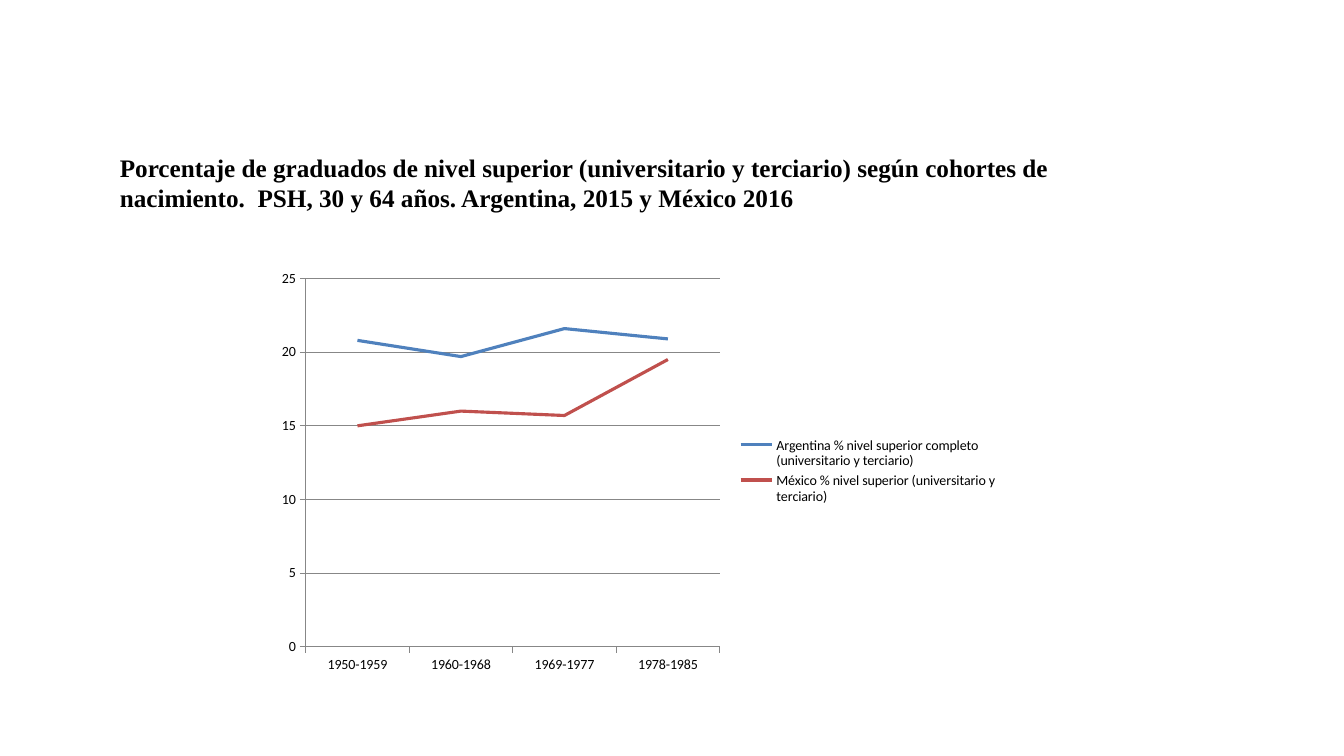
from dataclasses import dataclass

from lxml.etree import SubElement
from pptx import Presentation
from pptx.chart.chart import Chart
from pptx.chart.data import CategoryChartData
from pptx.dml.color import RGBColor
from pptx.enum.chart import XL_CHART_TYPE, XL_LEGEND_POSITION, XL_MARKER_STYLE, XL_TICK_MARK
from pptx.oxml.ns import qn
from pptx.slide import Slide
from pptx.util import Pt

BLACK = RGBColor(0x00, 0x00, 0x00)
GRAY = RGBColor(0x87, 0x87, 0x87)
BLUE = RGBColor(0x4F, 0x81, 0xBD)
RED = RGBColor(0xC0, 0x50, 0x4D)

TITLE = (
    "Porcentaje de graduados de nivel superior (universitario y terciario) según cohortes de "
    "nacimiento.  PSH, 30 y 64 años. Argentina, 2015 y México 2016"
)
COHORTS = ["1950-1959", "1960-1968", "1969-1977", "1978-1985"]


@dataclass(frozen=True)
class Country:
    label: str
    values: tuple[float, ...]
    color: RGBColor


COUNTRIES = [
    Country("Argentina % nivel superior completo (universitario y terciario)",
            (20.8, 19.7, 21.6, 20.9), BLUE),
    Country("México % nivel superior (universitario y terciario)",
            (15, 16, 15.7, 19.5), RED),
]


def add_text(s: Slide, text: str, *, left: float, top: float, width: float, height: float,
             size: float, font: str, color: RGBColor = BLACK, bold: bool = False) -> None:
    tf = s.shapes.add_textbox(Pt(left), Pt(top), Pt(width), Pt(height)).text_frame
    tf.word_wrap = True
    r = tf.paragraphs[0].add_run()
    r.text = text
    r.font.size = Pt(size)
    r.font.name = font
    r.font.bold = bold
    r.font.color.rgb = color


def set_plot_layout(chart: Chart, **fractions: float) -> None:
    """Fix the inner plot area, given as fractions (x, y, w, h) of the chart."""
    plot_area = chart.plots[0]._element.getparent()
    layout = plot_area.find(qn("c:layout"))
    if layout is None:
        layout = SubElement(plot_area, qn("c:layout"))
        plot_area.insert(0, layout)
    manual = SubElement(layout, qn("c:manualLayout"))
    settings = {"layoutTarget": "inner", "xMode": "edge", "yMode": "edge", **fractions}
    for tag, value in settings.items():
        SubElement(manual, qn(f"c:{tag}")).set("val", str(value))


def add_graduates_chart(s: Slide, left: float, top: float, width: float, height: float) -> None:
    data = CategoryChartData()
    data.categories = COHORTS
    for country in COUNTRIES:
        data.add_series(country.label, country.values)
    chart = s.shapes.add_chart(
        XL_CHART_TYPE.LINE, Pt(left), Pt(top), Pt(width), Pt(height), data
    ).chart
    chart.has_title = False
    chart.font.size = Pt(10)
    chart.font.name = "Calibri"
    chart.font.color.rgb = BLACK
    chart.has_legend = True
    chart.legend.position = XL_LEGEND_POSITION.RIGHT
    chart.legend.include_in_layout = False

    plot = chart.plots[0]
    plot.vary_by_categories = False
    for country, series in zip(COUNTRIES, plot.series):
        series.smooth = False
        series.marker.style = XL_MARKER_STYLE.NONE
        series.format.line.color.rgb = country.color
        series.format.line.width = Pt(2.25)

    value_axis = chart.value_axis
    value_axis.minimum_scale = 0
    value_axis.maximum_scale = 25
    value_axis.major_unit = 5
    value_axis.has_major_gridlines = True
    for axis in (value_axis, chart.category_axis):
        axis.major_tick_mark = XL_TICK_MARK.OUTSIDE
        axis.minor_tick_mark = XL_TICK_MARK.NONE
    for part in (value_axis, chart.category_axis, value_axis.major_gridlines):
        part.format.line.color.rgb = GRAY
        part.format.line.width = Pt(0.75)
    set_plot_layout(chart, x=0.05, y=0.04, w=0.56, h=0.88)


def main() -> None:
    prs = Presentation()
    prs.slide_width, prs.slide_height = Pt(960), Pt(540)
    s = prs.slides.add_slide(prs.slide_layouts[6])
    add_text(s, TITLE, left=78.5, top=105, width=732, height=51,
             size=18, font="Times New Roman", bold=True)
    add_graduates_chart(s, left=192, top=187, width=528, height=299)
    prs.save("out.pptx")


if __name__ == "__main__":
    main()
